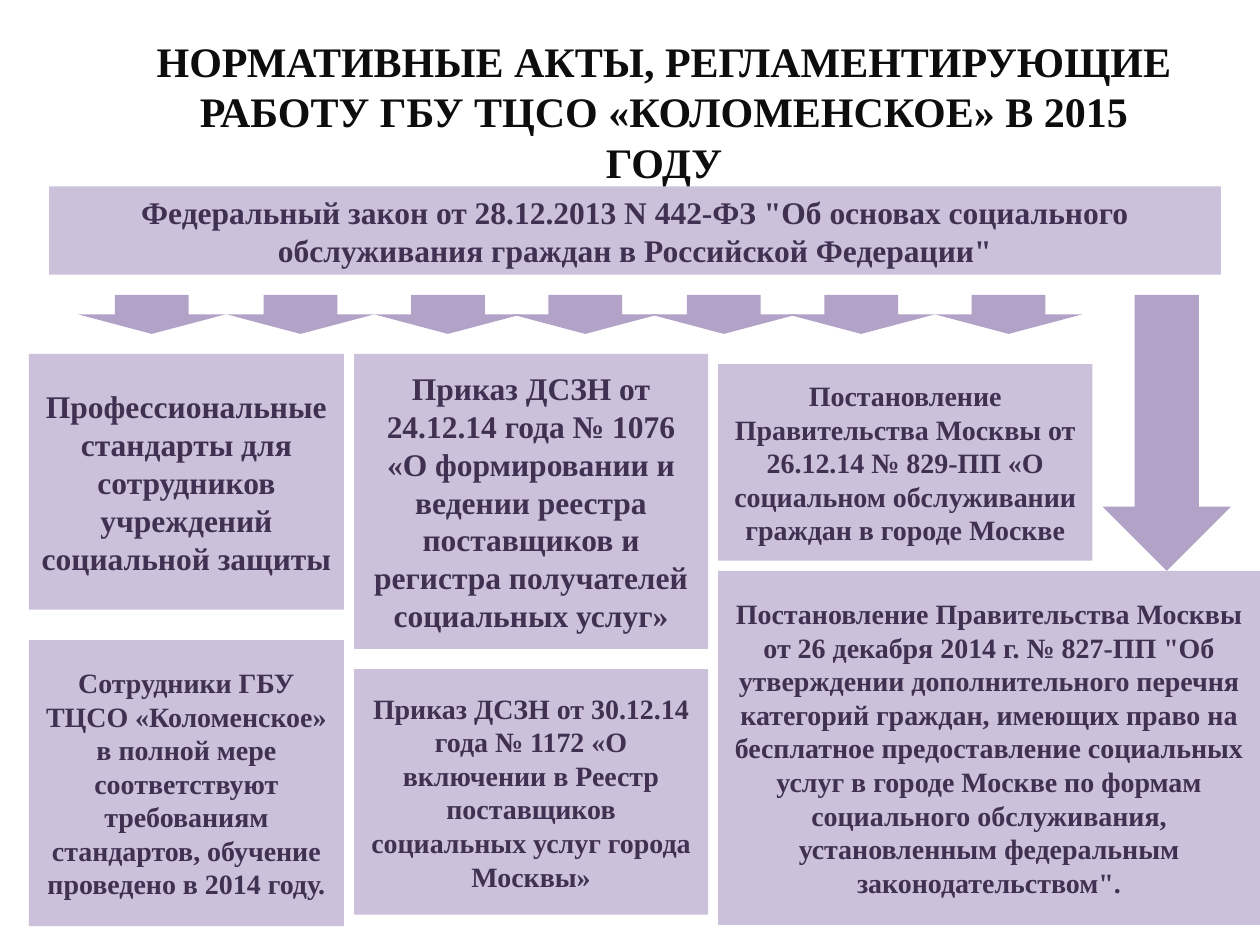
from pptx import Presentation
from pptx.dml.color import RGBColor
from pptx.enum.shapes import MSO_SHAPE as Shape
from pptx.enum.text import MSO_ANCHOR as Anchor, PP_ALIGN as Align
from pptx.util import Inches, Pt

INK = RGBColor(0x0D, 0x0D, 0x0D)
PLUM = RGBColor(0x40, 0x31, 0x52)
PALE = RGBColor(0xCC, 0xC1, 0xDA)
LILAC = RGBColor(0xB3, 0xA2, 0xC7)
FONT = "Times New Roman"

TITLE = "НОРМАТИВНЫЕ АКТЫ, РЕГЛАМЕНТИРУЮЩИЕ РАБОТУ ГБУ ТЦСО «КОЛОМЕНСКОЕ» В 2015 ГОДУ"
ACTS = [
    (0.39, 1.48, 9.3, 0.7, 18,
     'Федеральный закон от 28.12.2013 N 442-ФЗ "Об основах социального '
     'обслуживания граждан в Российской Федерации"'),
    (5.7, 2.89, 2.97, 1.56, 16,
     "Постановление Правительства Москвы от 26.12.14 № 829-ПП «О социальном "
     "обслуживании граждан в городе Москве"),
    (0.23, 2.81, 2.5, 2.03, 18,
     "Профессиональные стандарты для сотрудников учреждений социальной защиты"),
    (5.7, 4.53, 4.3, 2.81, 16,
     'Постановление Правительства Москвы от 26 декабря 2014 г. № 827-ПП "Об '
     "утверждении дополнительного перечня категорий граждан, имеющих право на "
     "бесплатное предоставление социальных услуг в городе Москве по формам "
     "социального обслуживания, установленным федеральным "
     'законодательством".'),
    (2.81, 2.81, 2.81, 2.34, 18,
     "Приказ ДСЗН от 24.12.14 года № 1076 «О формировании и ведении реестра "
     "поставщиков и регистра получателей социальных услуг»"),
    (0.23, 5.08, 2.5, 2.27, 16,
     "Сотрудники ГБУ ТЦСО «Коломенское» в полной мере соответствуют "
     "требованиям стандартов, обучение проведено в 2014 году."),
    (2.81, 5.31, 2.81, 1.95, 16,
     "Приказ ДСЗН от 30.12.14 года № 1172 «О включении в Реестр поставщиков "
     "социальных услуг города Москвы»"),
]
ARROWS = [0.62, 1.8, 2.97, 4.06, 5.16, 6.25, 7.42]


def write(shape, text, size, color, anchor):
    frame = shape.text_frame
    frame.word_wrap = True
    frame.vertical_anchor = anchor
    frame.text = text
    para = frame.paragraphs[0]
    para.alignment = Align.CENTER
    font = para.font
    font.name, font.size, font.bold = FONT, Pt(size), True
    font.color.rgb = color


def add_title(slide):
    title = slide.shapes.title
    title.left, title.top = Inches(1.02), Inches(0.23)
    title.width, title.height = Inches(8.5), Inches(1.49)
    write(title, TITLE, 24, INK, Anchor.TOP)


def add_form(slide, kind, left, top, width, height, color):
    form = slide.shapes.add_shape(
        kind, Inches(left), Inches(top), Inches(width), Inches(height))
    form.shadow.inherit = False
    form.fill.solid()
    form.fill.fore_color.rgb = color
    form.line.fill.background()
    return form


def add_act(slide, left, top, width, height, size, text):
    box = add_form(slide, Shape.RECTANGLE, left, top, width, height, PALE)
    write(box, text, size, PLUM, Anchor.MIDDLE)


def add_arrow(slide, left, width, height):
    add_form(slide, Shape.DOWN_ARROW, left, 2.34, width, height, LILAC)


def main():
    deck = Presentation()
    deck.slide_width, deck.slide_height = Inches(10), Inches(7.5)
    slide = deck.slides.add_slide(deck.slide_layouts[5])
    add_title(slide)
    for act in ACTS:
        add_act(slide, *act)
    for left in ARROWS:
        add_arrow(slide, left, 1.17, 0.31)
    add_arrow(slide, 8.75, 1.02, 2.19)
    deck.save("out.pptx")


if __name__ == "__main__":
    main()
